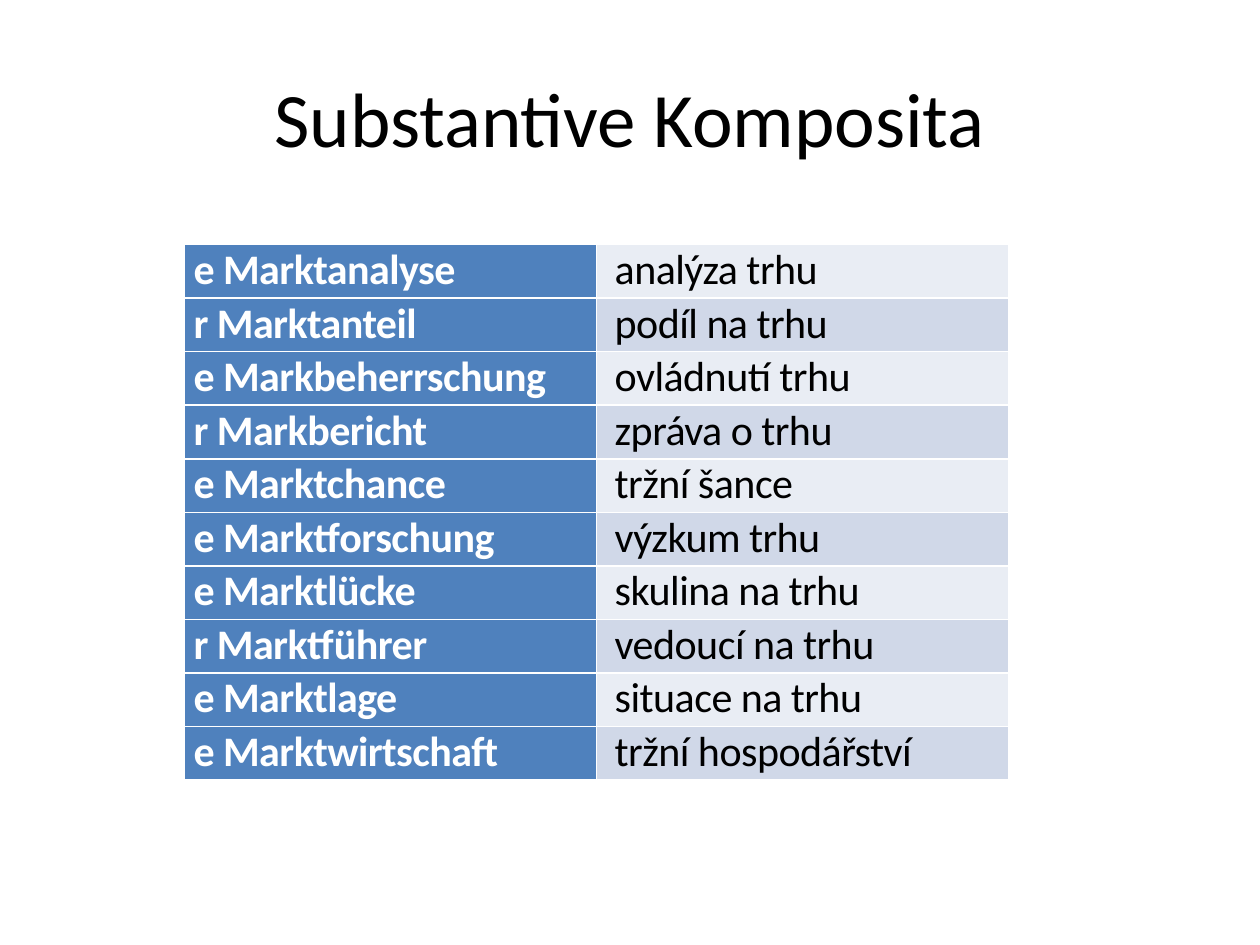
"""Build a slide with a German-Czech glossary of market compounds."""
from pptx import Presentation
from pptx.dml.color import RGBColor
from pptx.enum.text import MSO_ANCHOR, PP_ALIGN
from pptx.util import Pt

TITLE = "Substantive Komposita"
GLOSSARY = [
    ("e Marktanalyse", "analýza trhu"),
    ("r Marktanteil", "podíl na trhu"),
    ("e Markbeherrschung", "ovládnutí trhu"),
    ("r Markbericht", "zpráva o trhu"),
    ("e Marktchance", "tržní šance"),
    ("e Marktforschung", "výzkum trhu"),
    ("e Marktlücke", "skulina na trhu"),
    ("r Marktführer", "vedoucí na trhu"),
    ("e Marktlage", "situace na trhu"),
    ("e Marktwirtschaft", "tržní hospodářství"),
]

BLACK = RGBColor(0x00, 0x00, 0x00)
WHITE = RGBColor(0xFF, 0xFF, 0xFF)
BLUE = RGBColor(0x4F, 0x81, 0xBD)
BANDS = [RGBColor(0xE9, 0xED, 0xF4), RGBColor(0xD0, 0xD8, 0xE8)]

COL_W, ROW_H = 235.6, 30.6
TITLE_FONT = {"name": "Calibri", "size": Pt(44)}
CELL_FONT = {"name": "Calibri", "size": Pt(24)}
CELL_MARGINS = {"margin_right": Pt(5.4), "margin_top": 0, "margin_bottom": 0}


def set_attrs(obj, values):
    for name, value in values.items():
        setattr(obj, name, value)


def write(tf, text, align, color, font):
    p = tf.paragraphs[0]
    p.alignment = align
    r = p.add_run()
    r.text = text
    set_attrs(r.font, font)
    r.font.color.rgb = color
    return r


def add_title(slide):
    tf = slide.shapes.add_textbox(Pt(36), Pt(21.6), Pt(648), Pt(90)).text_frame
    set_attrs(tf, {"word_wrap": True, "vertical_anchor": MSO_ANCHOR.MIDDLE})
    write(tf, TITLE, PP_ALIGN.CENTER, BLACK, TITLE_FONT)


def add_glossary(slide):
    rows = len(GLOSSARY)
    table = slide.shapes.add_table(
        rows, 2, Pt(105.2), Pt(139.8), Pt(2 * COL_W), Pt(rows * ROW_H)
    ).table
    table.first_col = True
    for row in table.rows:
        row.height = Pt(ROW_H)
    for i, entry in enumerate(GLOSSARY):
        styles = [(BLUE, WHITE, True, 5.4), (BANDS[i % 2], BLACK, False, 10.5)]
        for j, (fill, color, bold, left) in enumerate(styles):
            cell = table.cell(i, j)
            set_attrs(cell, CELL_MARGINS | {"margin_left": Pt(left)})
            cell.fill.solid()
            cell.fill.fore_color.rgb = fill
            font = CELL_FONT | {"bold": bold}
            r = write(cell.text_frame, entry[j], PP_ALIGN.JUSTIFY, color, font)
            r.font._element.set("spc", "-30")


def main():
    prs = Presentation()
    set_attrs(prs, {"slide_width": Pt(720), "slide_height": Pt(540)})
    slide = prs.slides.add_slide(prs.slide_layouts[6])
    add_title(slide)
    add_glossary(slide)
    prs.save("out.pptx")


if __name__ == "__main__":
    main()
